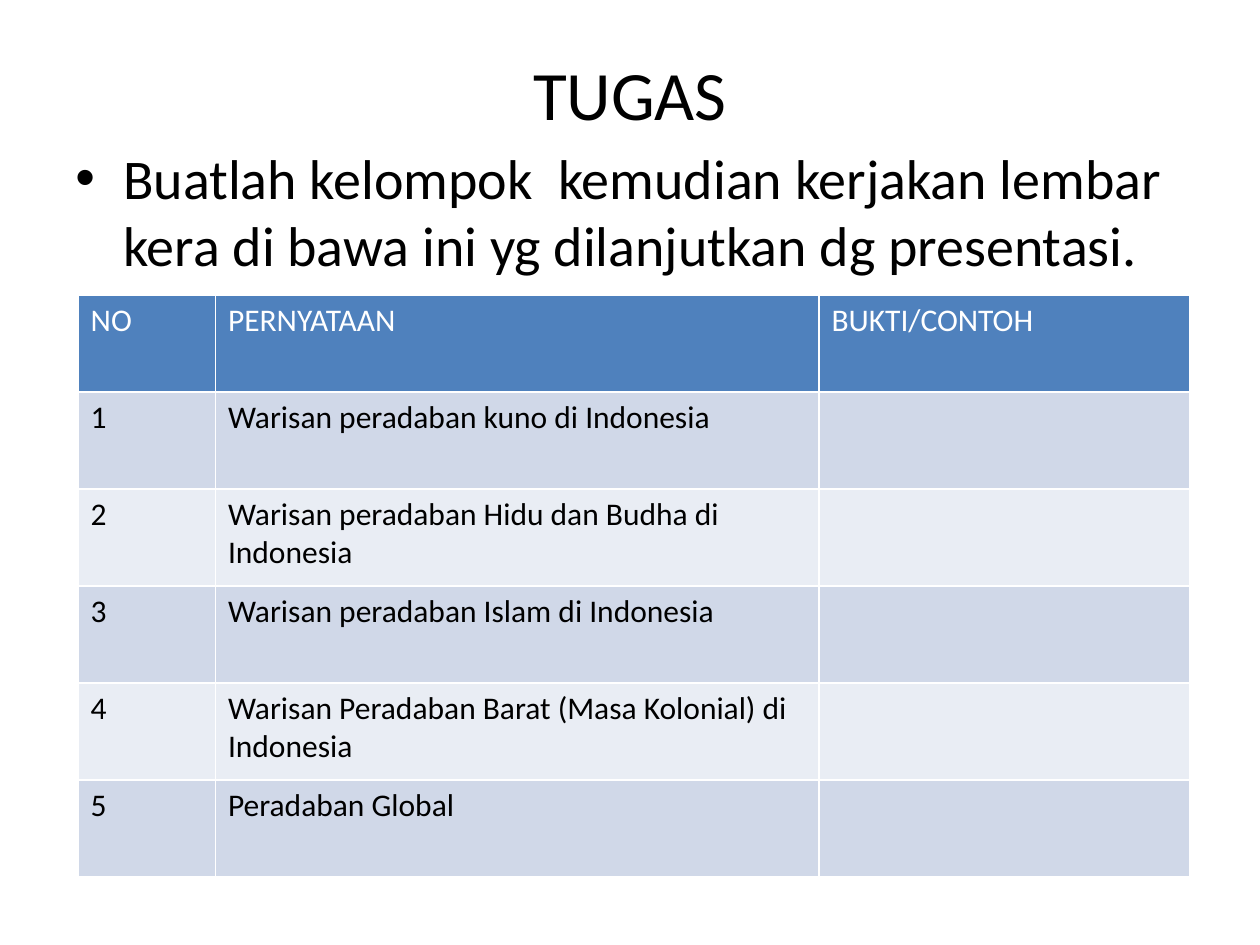
import dataclasses

import lxml.etree
import pptx
import pptx.dml.color
import pptx.enum.text
import pptx.oxml.ns
import pptx.util

Inches = pptx.util.Inches
Pt = pptx.util.Pt
qn = pptx.oxml.ns.qn
RGB = pptx.dml.color.RGBColor.from_string
ANCHOR = pptx.enum.text.MSO_ANCHOR
ALIGN = pptx.enum.text.PP_ALIGN


@dataclasses.dataclass(frozen=True)
class Theme:
    font: str = "Calibri"
    ink: str = "000000"
    paper: str = "FFFFFF"
    header_fill: str = "4F81BD"
    band_fills: tuple = ("D0D8E8", "E9EDF4")
    title_size: float = 39.6
    body_size: float = 32
    table_size: float = 18
    border_width: float = 1


def apply_format(target, values):
    for name, value in values.items():
        setattr(target, name, value)


class PageBuilder:
    def __init__(self, page, theme):
        self.page = page
        self.theme = theme

    def add_span(self, para, text, size, color):
        span = para.add_run()
        span.text = text
        apply_format(span.font, {"name": self.theme.font, "size": Pt(size)})
        span.font.color.rgb = RGB(color)

    def text_box(self, place, text, size, anchor, align, bullet_indent=None):
        box = self.page.shapes.add_textbox(*map(Inches, place))
        apply_format(box.text_frame, {"word_wrap": True, "vertical_anchor": anchor})
        para = box.text_frame.paragraphs[0]
        para.alignment = align
        if bullet_indent:
            self.bullet(para, bullet_indent)
        self.add_span(para, text, size, self.theme.ink)

    def bullet(self, para, indent):
        props = para._p.get_or_add_pPr()
        props.set("marL", str(Inches(indent)))
        props.set("indent", str(-Inches(indent)))
        lxml.etree.SubElement(props, qn("a:buFont"), typeface="Arial")
        lxml.etree.SubElement(props, qn("a:buChar"), char="•")

    def border(self, cell):
        props = cell._tc.get_or_add_tcPr()
        for position, side in enumerate(("a:lnL", "a:lnR", "a:lnT", "a:lnB")):
            line = lxml.etree.Element(qn(side), w=str(Pt(self.theme.border_width)))
            fill = lxml.etree.SubElement(line, qn("a:solidFill"))
            lxml.etree.SubElement(fill, qn("a:srgbClr"), val=self.theme.paper)
            props.insert(position, line)

    def table(self, left, top, widths, row_height, rows):
        place = (left, top, sum(widths), row_height * len(rows))
        frame = self.page.shapes.add_table(len(rows), len(widths), *map(Inches, place))
        table = frame.table
        apply_format(table, {"first_row": False, "horz_banding": False})
        for column, width in zip(table.columns, widths):
            column.width = Inches(width)
        for index, texts in enumerate(rows):
            table.rows[index].height = Inches(row_height)
            fill, color = self.theme.header_fill, self.theme.paper
            if index:
                fill, color = self.theme.band_fills[(index - 1) % 2], self.theme.ink
            for cell, text in zip(table.rows[index].cells, texts):
                cell.fill.solid()
                cell.fill.fore_color.rgb = RGB(fill)
                self.border(cell)
                if text:
                    self.add_span(cell.text_frame.paragraphs[0], text,
                                  self.theme.table_size, color)


def main():
    deck = pptx.Presentation()
    apply_format(deck, {"slide_width": Inches(10), "slide_height": Inches(7.5)})
    theme = Theme()
    builder = PageBuilder(deck.slides.add_slide(deck.slide_layouts[6]), theme)

    builder.text_box((0.5, 0.39, 9, 0.7), "TUGAS", theme.title_size,
                     ANCHOR.MIDDLE, ALIGN.CENTER)
    builder.text_box(
        (0.5, 1.09, 9, 5.82),
        "Buatlah kelompok  kemudian kerjakan lembar kera di bawa ini yg "
        "dilanjutkan dg presentasi.",
        theme.body_size, ANCHOR.TOP, ALIGN.LEFT, bullet_indent=0.38)

    statements = [
        "Warisan peradaban kuno di Indonesia",
        "Warisan peradaban Hidu dan Budha di Indonesia",
        "Warisan peradaban Islam di Indonesia",
        "Warisan Peradaban Barat (Masa Kolonial) di Indonesia",
        "Peradaban Global",
    ]
    rows = [("NO", "PERNYATAAN", "BUKTI/CONTOH")]
    rows += [(str(number), text, "") for number, text in enumerate(statements, 1)]
    builder.table(0.62, 2.34, (1.09, 4.79, 2.94), 0.77, rows)
    deck.save("out.pptx")


if __name__ == "__main__":
    main()
